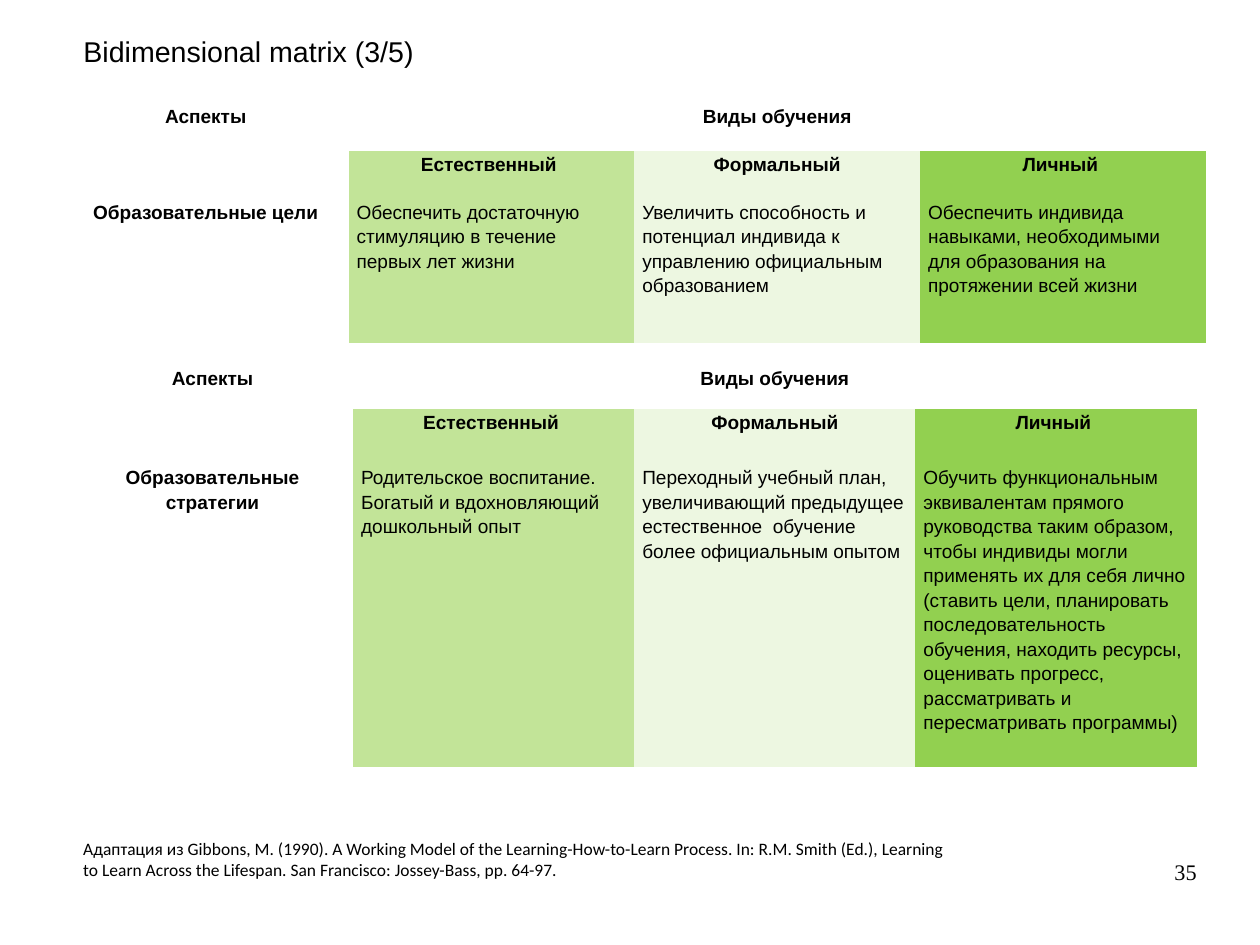
from pptx import Presentation, util as u
from pptx.dml.color import RGBColor
from pptx.enum import text as t
from pptx.oxml.ns import qn

PLAIN = "{2D5ABB26-0587-4C30-8999-92F81FD0307C}"
FILLS = ["C2E498", "EDF7E1", "92D050"]
KINDS = ["Естественный ", "Формальный", "Личный "]
GOALS = [
    "Образовательные цели",
    "Обеспечить достаточную стимуляцию в течение первых лет жизни",
    "Увеличить способность и потенциал индивида к управлению официальным образованием",
    "Обеспечить индивида навыками, необходимыми для образования на протяжении всей жизни",
]
PLANS = [
    "Образовательные стратегии",
    "Родительское воспитание. Богатый и вдохновляющий дошкольный опыт",
    "Переходный учебный план, увеличивающий предыдущее естественное  обучение  "
    "более официальным опытом",
    "Обучить функциональным эквивалентам прямого руководства таким образом, "
    "чтобы индивиды могли применять их для себя лично (ставить цели, планировать "
    "последовательность обучения, находить ресурсы, оценивать прогресс, "
    "рассматривать и пересматривать программы)",
]
SOURCE = (
    "Адаптация из Gibbons, M. (1990). A Working Model of the Learning-How-to-Learn "
    "Process. In: R.M. Smith (Ed.), Learning to Learn Across the Lifespan. "
    "San Francisco: Jossey-Bass, pp. 64-97."
)


def color(code):
    return RGBColor.from_string(code)


def inches(box):
    return [u.Inches(n) for n in box]


def write(frame, words, size, font="Arial", bold=False,
          align=t.PP_ALIGN.LEFT, lead=1.0):
    para = frame.paragraphs[0]
    para.alignment = align
    para.line_spacing = lead
    run = para.add_run()
    run.text = words
    run.font.size = u.Pt(size)
    run.font.name = font
    run.font.bold = bold
    run.font.color.rgb = color("000000")


def title(slide, box, words):
    head = slide.shapes.title
    head.left, head.top, head.width, head.height = inches(box)
    frame = head.text_frame
    frame.vertical_anchor = t.MSO_ANCHOR.TOP
    frame.auto_size = t.MSO_AUTO_SIZE.NONE
    write(frame, words, 18, lead=0.93)


def note(slide, box, words):
    frame = slide.shapes.add_textbox(*inches(box)).text_frame
    frame.word_wrap = True
    frame.vertical_anchor = t.MSO_ANCHOR.MIDDLE
    write(frame, words, 11, "Calibri")


def number(slide, box, words):
    frame = slide.shapes.add_textbox(*inches(box)).text_frame
    frame.word_wrap = True
    frame.margin_left = frame.margin_right = 0
    frame.margin_top = frame.margin_bottom = 0
    write(frame, words, 14, "Times New Roman", align=t.PP_ALIGN.RIGHT, lead=0.95)


def matrix(slide, box, tops, body):
    shape = slide.shapes.add_table(3, 4, *inches(box))
    for style in shape.element.iter(qn("a:tableStyleId")):
        style.text = PLAIN
    grid = shape.table
    grid.first_row = grid.horz_banding = False
    for col in grid.columns:
        col.width = u.Inches(box[2] / 4)
    for row, size in zip(grid.rows, [*tops, box[3] - sum(tops)]):
        row.height = u.Inches(size)
    grid.cell(0, 0).merge(grid.cell(1, 0))
    grid.cell(0, 1).merge(grid.cell(0, 3))
    rows = [["Аспекты", "Виды обучения", "", ""], ["", *KINDS], body]
    for r, line in enumerate(rows):
        for c, words in enumerate(line):
            cell = grid.cell(r, c)
            cell.margin_left = cell.margin_right = u.Inches(0.07)
            cell.margin_top = cell.margin_bottom = 0
            if r and c:
                cell.fill.solid()
                cell.fill.fore_color.rgb = color(FILLS[c - 1])
            else:
                cell.fill.background()
            if words:
                label = r < 2 or c == 0
                align = t.PP_ALIGN.CENTER if label else t.PP_ALIGN.LEFT
                write(cell.text_frame, words, 12, bold=label, align=align, lead=1.15)


def main():
    deck = Presentation()
    deck.slide_width = u.Cm(28)
    deck.slide_height = u.Cm(21)
    slide = deck.slides.add_slide(deck.slide_layouts[5])
    edge = 0.63
    title(slide, (edge, 0.27, 6.77, 0.38), "Bidimensional matrix (3/5)")
    matrix(slide, (0.55, 0.9, 10, 2.1), [0.42, 0.42], GOALS)
    matrix(slide, (edge, 3.19, 9.84, 3.52), [0.39, 0.48], PLANS)
    note(slide, (edge, 7.28, 7.87, 0.47), SOURCE)
    number(slide, (7.9, 7.53, 2.57, 0.57), "35")
    deck.save("out.pptx")


if __name__ == "__main__":
    main()
